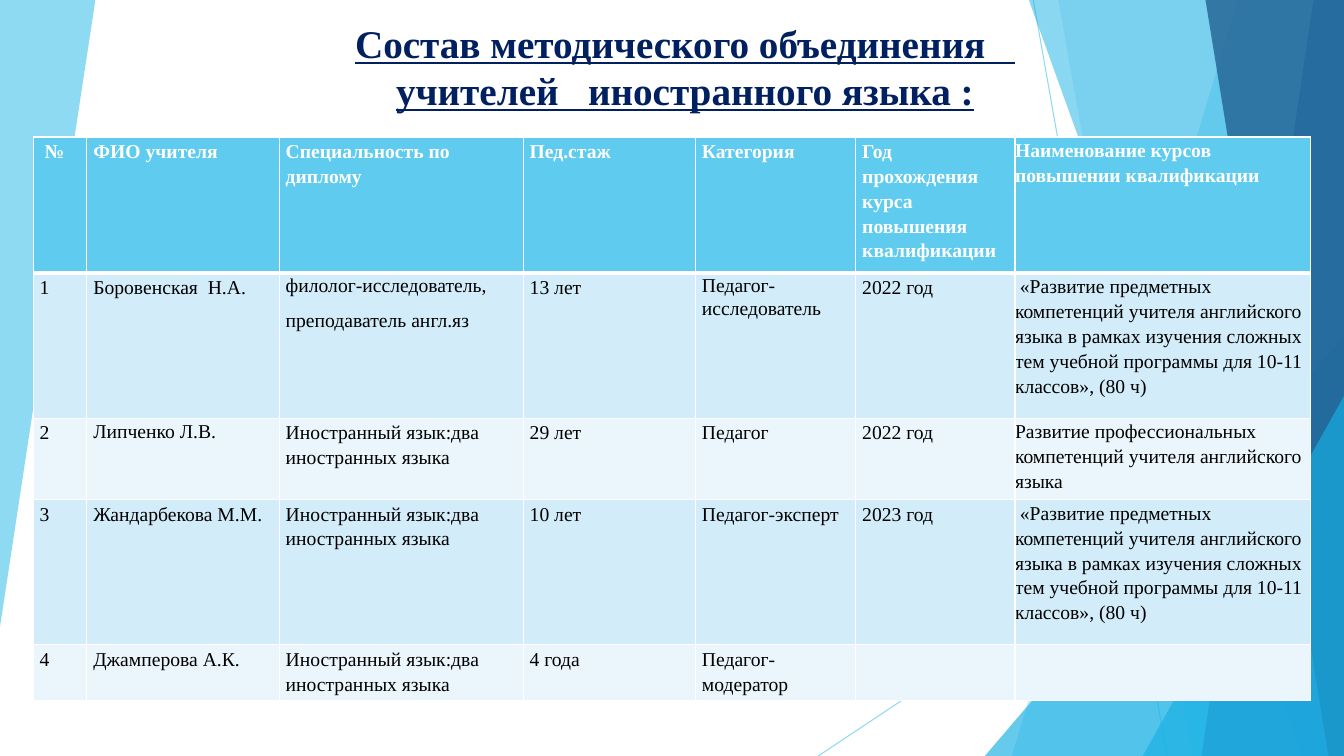
"""Build the slide that lists the members of a foreign language teachers' group."""
from pptx import Presentation
from pptx.dml.color import RGBColor
from pptx.enum.shapes import MSO_CONNECTOR as Connector, MSO_SHAPE as Shape
from pptx.enum.text import MSO_ANCHOR as Anchor, MSO_AUTO_SIZE as AutoSize, PP_ALIGN as Align
from pptx.oxml.ns import qn
from pptx.util import Cm, Pt
from lxml.etree import SubElement

FONT = "Times New Roman"
WIDTH, HEIGHT = 33.87, 19.05
SKY, AZURE, BLUE, NAVY = "5FCBEF", "17B0E4", "2E83C3", "226292"
WHITE, BLACK, TITLE_COLOR = "FFFFFF", "000000", "002060"
BANDS = ["D2ECF9", "EAF6FC"]

TITLE = ["Состав методического объединения   ", "учителей   иностранного языка :"]
LANGUAGES = "Иностранный язык:два иностранных языка"
COURSE = (" «Развитие предметных компетенций учителя английского языка в рамках "
          "изучения сложных тем учебной программы для 10-11 классов», (80 ч)")
HEADER = [" №", "ФИО учителя", "Специальность по  диплому", "Пед.стаж", "Категория",
          "Год прохождения курса повышения квалификации",
          "Наименование курсов повышении квалификации"]
TEACHERS = [
    ["1", "Боровенская  Н.А.", "филолог-исследователь,\nпреподаватель англ.яз", "13 лет",
     "Педагог-исследователь", "2022 год", COURSE],
    ["2", "Липченко Л.В.", LANGUAGES, "29 лет", "Педагог", "2022 год",
     "Развитие профессиональных компетенций учителя английского языка"],
    ["3", "Жандарбекова М.М.", LANGUAGES, "10 лет", "Педагог-эксперт", "2023 год", COURSE],
    ["4", "Джамперова А.К.", LANGUAGES, "4 года", "Педагог-модератор", "", ""],
]
COLUMN_WIDTHS = [1.35, 4.85, 6.15, 4.34, 4.04, 4.01, 7.44]
ROW_HEIGHTS = [3.43, 3.66, 2.05, 3.66, 1.4]
TIGHT_CELLS = {(1, 2), (1, 4), (2, 1)}


def paint(target, color, opacity=100):
    """Give a fill or font colour a hex value and, if needed, transparency."""
    target.rgb = RGBColor.from_string(color)
    if opacity < 100:
        return str(opacity * 1000)
    return None


def fill(owner, color, opacity=100):
    """Fill a shape, line or cell with one colour."""
    area = owner.fill
    area.solid()
    alpha = paint(area.fore_color, color, opacity)
    if alpha:
        properties = owner.element.spPr if hasattr(owner, "element") else owner.ln if hasattr(owner, "ln") else None
        if properties is not None:
            SubElement(properties.find(f".//{qn('a:srgbClr')}"), qn("a:alpha"), val=alpha)


def write(frame, lines, size, color, bold=False, underline=None, align=None,
          spacing=None, after=None):
    """Write lines of text as formatted paragraphs."""
    for index, line in enumerate(lines):
        para = frame.add_paragraph() if index else frame.paragraphs[0]
        para.alignment, para.line_spacing = align, spacing
        if after is not None:
            para.space_after = Pt(after)
        span = para.add_run()
        span.text = line
        span.font.name, span.font.size = FONT, Pt(size)
        span.font.bold, span.font.underline = bold, underline
        paint(span.font.color, color)


def add_facet(page, points, color, opacity):
    """Draw a translucent polygon."""
    corners = [(Cm(x), Cm(y)) for x, y in points]
    builder = page.shapes.build_freeform(*corners[0], scale=1.0)
    builder.add_line_segments(corners[1:], close=True)
    finish_facet(builder.convert_to_shape(), color, opacity)


def add_triangle(page, left, top):
    """Draw a right triangle that reaches the lower right corner of the page."""
    triangle = page.shapes.add_shape(Shape.ISOSCELES_TRIANGLE, Cm(left), Cm(top),
                                     Cm(WIDTH - left), Cm(HEIGHT - top))
    triangle.adjustments[0] = 1
    finish_facet(triangle, AZURE, 66)


def finish_facet(facet, color, opacity):
    """Fill a facet and remove its outline and shadow."""
    fill(facet, color, opacity)
    facet.line.fill.background()
    facet.shadow.inherit = False


def add_ray(page, start, end):
    """Draw a thin translucent line."""
    ray = page.shapes.add_connector(Connector.STRAIGHT, *map(Cm, start + end))
    ray.line.width = Pt(0.75)
    alpha = paint(ray.line.color, SKY, 70)
    properties = ray.element.spPr
    SubElement(properties.find(f".//{qn('a:srgbClr')}"), qn("a:alpha"), val=alpha)
    SubElement(properties, qn("a:effectLst"))


def add_decor(page):
    """Draw the facets and rays at both sides of the page."""
    add_facet(page, [(0, 0), (2.4, 0), (2.4, 0.03), (0, 15.8)], SKY, 70)
    add_ray(page, (26.04, 0), (29.41, HEIGHT))
    add_ray(page, (WIDTH, 10.24), (20.62, HEIGHT))
    add_side_facet(page, 31.19, 25.5, SKY, 36)
    add_side_facet(page, 26.67, 30.05, SKY, 20)
    add_triangle(page, 24.82, 8.46)
    add_side_facet(page, 25.93, 32.79, AZURE, 50)
    add_side_facet(page, 33.1, 30.28, BLUE, 70)
    add_side_facet(page, 30.38, 33.48, NAVY, 80)
    add_triangle(page, 28.8, 9.98)


def add_side_facet(page, top_x, bottom_x, color, opacity):
    """Draw a full-height facet that ends at the right page edge."""
    points = [(top_x, 0), (WIDTH, 0), (WIDTH, HEIGHT), (bottom_x, HEIGHT)]
    add_facet(page, points, color, opacity)


def add_title(page):
    """Place and format the title above the decoration."""
    title = page.shapes.title
    page.shapes.element.append(title.element)
    title.left, title.top, title.width, title.height = map(Cm, (5.26, 0.36, 24, 2.64))
    frame = title.text_frame
    frame.word_wrap, frame.auto_size = True, AutoSize.SHAPE_TO_FIT_TEXT
    frame.vertical_anchor = Anchor.TOP
    write(frame, TITLE, 28, TITLE_COLOR, bold=True, underline=True, align=Align.CENTER)


def add_borders(cell, top, bottom):
    """Give a cell white borders."""
    properties = cell._tc.get_or_add_tcPr()
    for side, width in (("L", 1), ("R", 1), ("T", top), ("B", bottom)):
        border = SubElement(properties, qn(f"a:ln{side}"), w=str(Pt(width)))
        color = SubElement(border, qn("a:solidFill"))
        SubElement(color, qn("a:srgbClr"), val=WHITE)


def format_cell(cell, text, row, column):
    """Set the borders, fill, margins and text of one cell."""
    add_borders(cell, 3 if row == 1 else 1, 1 if row else 3)
    fill(cell, BANDS[(row - 1) % 2] if row else SKY)
    last = column == len(HEADER) - 1
    cell.margin_left = cell.margin_right = Cm(0 if last else 0.16)
    cell.margin_top, cell.margin_bottom = Cm(0 if last else 0.02), Cm(0)
    spacing, after = (1.07, 8) if (row, column) in TIGHT_CELLS else (1.15, 10)
    if text:
        write(cell.text_frame, text.split("\n"), 14, BLACK if row else WHITE,
              bold=not row, spacing=spacing, after=after)


def add_staff_table(page):
    """Add the table of teachers."""
    rows = [HEADER] + TEACHERS
    table = page.shapes.add_table(len(rows), len(HEADER), Cm(0.84), Cm(3.45),
                                  Cm(sum(COLUMN_WIDTHS)), Cm(sum(ROW_HEIGHTS))).table
    for column, width in zip(table.columns, COLUMN_WIDTHS):
        column.width = Cm(width)
    for row, height in zip(table.rows, ROW_HEIGHTS):
        row.height = Cm(height)
    for row, texts in enumerate(rows):
        for column, text in enumerate(texts):
            format_cell(table.cell(row, column), text, row, column)


def main():
    """Build and save the deck."""
    deck = Presentation()
    deck.slide_width, deck.slide_height = Cm(WIDTH), Cm(HEIGHT)
    page = deck.slides.add_slide(deck.slide_layouts[5])
    add_decor(page)
    add_title(page)
    add_staff_table(page)
    deck.save("out.pptx")


if __name__ == "__main__":
    main()
